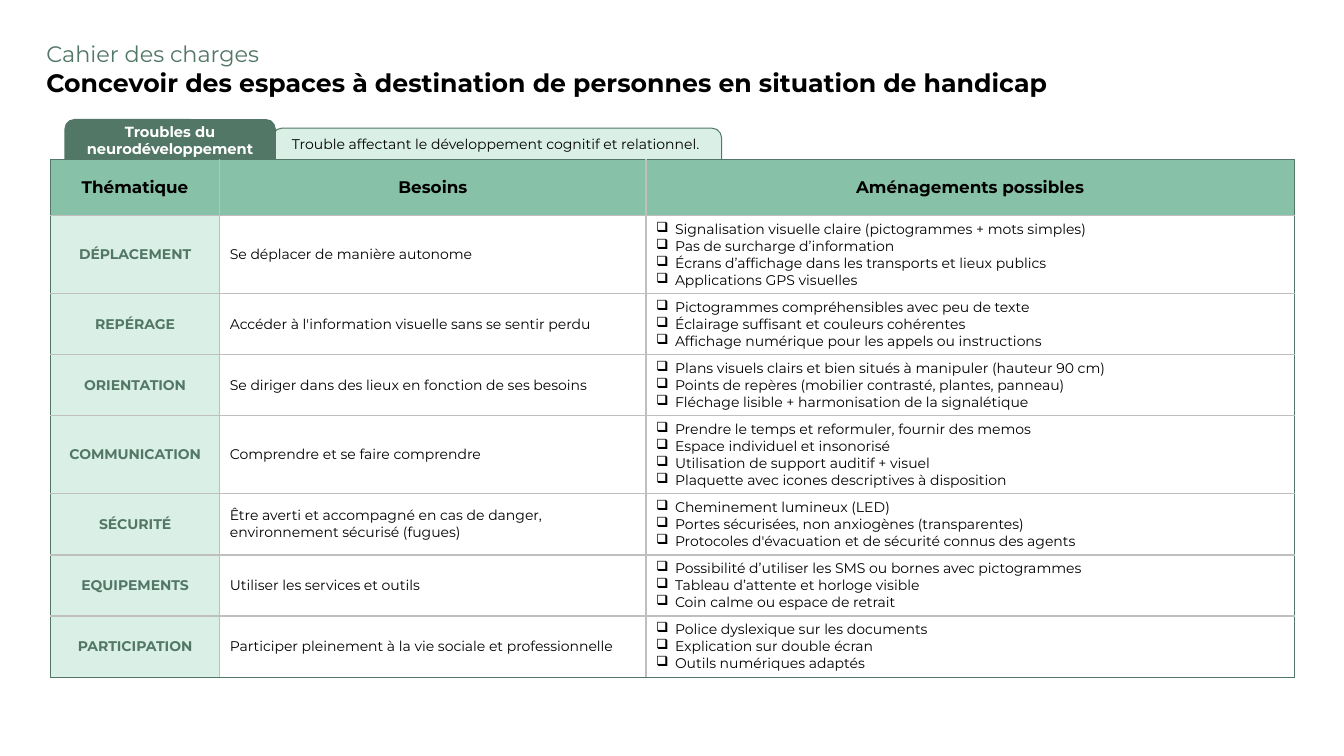
from dataclasses import dataclass

from lxml.etree import SubElement
from pptx import Presentation
from pptx.dml.color import RGBColor
from pptx.enum.shapes import MSO_SHAPE
from pptx.enum.text import MSO_ANCHOR, PP_ALIGN
from pptx.oxml.ns import qn
from pptx.util import Pt


@dataclass(frozen=True)
class Theme:
    font: str = "Montserrat"
    dark: str = "527767"
    medium: str = "86C1A8"
    light: str = "DAF0E7"
    grid: str = "BFBFBF"
    black: str = "000000"
    white: str = "FFFFFF"
    title: float = 18
    subtitle: float = 16
    header: float = 12
    tab: float = 10.5
    body: float = 10


HEADERS = ["Thématique", "Besoins", "Aménagements possibles"]
COLUMN_WIDTHS = [121, 304.5, 463]
HEADER_HEIGHT = 40
LINE_HEIGHT = 12
ROW_PADDING = 7.5
BULLET_INDENT = 13.5

REQUIREMENTS = [
    ("DÉPLACEMENT", "Se déplacer de manière autonome", [
        "Signalisation visuelle claire (pictogrammes + mots simples)",
        "Pas de surcharge d’information",
        "Écrans d’affichage dans les transports et lieux publics",
        "Applications GPS visuelles",
    ]),
    ("REPÉRAGE", "Accéder à l'information visuelle sans se sentir perdu", [
        "Pictogrammes compréhensibles avec peu de texte",
        "Éclairage suffisant et couleurs cohérentes",
        "Affichage numérique pour les appels ou instructions",
    ]),
    ("ORIENTATION", "Se diriger dans des lieux en fonction de ses besoins", [
        "Plans visuels clairs et bien situés à manipuler (hauteur 90 cm)",
        "Points de repères (mobilier contrasté, plantes, panneau)",
        "Fléchage lisible + harmonisation de la signalétique",
    ]),
    ("COMMUNICATION", "Comprendre et se faire comprendre", [
        "Prendre le temps et reformuler, fournir des memos",
        "Espace individuel et insonorisé",
        "Utilisation de support auditif + visuel",
        "Plaquette avec icones descriptives à disposition",
    ]),
    ("SÉCURITÉ", "Être averti et accompagné en cas de danger, environnement sécurisé (fugues)", [
        "Cheminement lumineux (LED)",
        "Portes sécurisées, non anxiogènes (transparentes)",
        "Protocoles d'évacuation et de sécurité connus des agents",
    ]),
    ("EQUIPEMENTS", "Utiliser les services et outils", [
        "Possibilité d’utiliser les SMS ou bornes avec pictogrammes",
        "Tableau d’attente et horloge visible",
        "Coin calme ou espace de retrait",
    ]),
    ("PARTICIPATION", "Participer pleinement à la vie sociale et professionnelle", [
        "Police dyslexique sur les documents",
        "Explication sur double écran",
        "Outils numériques adaptés",
    ]),
]


def apply_format(target, values):
    for name, value in values.items():
        setattr(target, name, value)


class SlideBuilder:
    def __init__(self, slide, theme):
        self.slide = slide
        self.theme = theme

    def add_text(self, frame, text, size, color, bold=False, align=PP_ALIGN.LEFT, first=True):
        paragraph = frame.paragraphs[0] if first else frame.add_paragraph()
        paragraph.alignment = align
        run = paragraph.add_run()
        run.text = text
        apply_format(run.font, {"name": self.theme.font, "size": Pt(size), "bold": bold})
        run.font.color.rgb = RGBColor.from_string(color)
        return paragraph

    def add_title(self, left, top, width, height, subtitle, title):
        frame = self.slide.shapes.add_textbox(Pt(left), Pt(top), Pt(width), Pt(height)).text_frame
        frame.word_wrap = False
        self.add_text(frame, subtitle, self.theme.subtitle, self.theme.dark)
        self.add_text(frame, title, self.theme.title, self.theme.black, bold=True, first=False)

    def add_tab(self, left, top, width, height, fill, line, margins, text, **style):
        shape = self.slide.shapes.add_shape(
            MSO_SHAPE.ROUNDED_RECTANGLE, Pt(left), Pt(top), Pt(width), Pt(height))
        shape.shadow.inherit = False
        shape.fill.solid()
        shape.fill.fore_color.rgb = RGBColor.from_string(fill)
        if line:
            shape.line.color.rgb = RGBColor.from_string(line)
            shape.line.width = Pt(0.75)
        else:
            shape.line.fill.background()
        frame = shape.text_frame
        margin_left, margin_top = margins
        apply_format(frame, {
            "word_wrap": True,
            "vertical_anchor": MSO_ANCHOR.TOP,
            "margin_left": Pt(margin_left),
            "margin_top": Pt(margin_top),
        })
        self.add_text(frame, text, **style)

    def add_bullet(self, paragraph):
        properties = paragraph._p.get_or_add_pPr()
        properties.set("marL", str(Pt(BULLET_INDENT)))
        properties.set("indent", str(-Pt(BULLET_INDENT)))
        SubElement(properties, qn("a:buChar")).set("char", "❑")

    def set_cell(self, cell, fill, edges):
        cell.vertical_anchor = MSO_ANCHOR.MIDDLE
        properties = cell._tc.get_or_add_tcPr()
        for side, outer in edges.items():
            line = SubElement(properties, qn(f"a:ln{side}"), w=str(Pt(1)))
            solid = SubElement(line, qn("a:solidFill"))
            color = self.theme.dark if outer else self.theme.grid
            SubElement(solid, qn("a:srgbClr")).set("val", color)
        cell.fill.solid()
        cell.fill.fore_color.rgb = RGBColor.from_string(fill)

    def add_table(self, left, top, headers, requirements):
        theme = self.theme
        heights = [HEADER_HEIGHT]
        heights += [LINE_HEIGHT * len(items) + ROW_PADDING for _, _, items in requirements]
        table = self.slide.shapes.add_table(
            len(heights), len(headers), Pt(left), Pt(top),
            Pt(sum(COLUMN_WIDTHS)), Pt(sum(heights))).table
        apply_format(table, {"first_row": False, "horz_banding": False})
        for column, width in zip(table.columns, COLUMN_WIDTHS):
            column.width = Pt(width)
        for row, height in zip(table.rows, heights):
            row.height = Pt(height)
        last_row, last_column = len(heights) - 1, len(headers) - 1
        for i in range(len(heights)):
            for j in range(len(headers)):
                fill = theme.medium if i == 0 else theme.light if j == 0 else theme.white
                edges = {"L": j == 0, "R": j == last_column, "T": i == 0, "B": i == last_row}
                self.set_cell(table.cell(i, j), fill, edges)
        for j, header in enumerate(headers):
            self.add_text(table.cell(0, j).text_frame, header, theme.header, theme.black,
                          bold=True, align=PP_ALIGN.CENTER)
        for i, (topic, need, items) in enumerate(requirements, 1):
            topic_frame, need_frame, items_frame = [cell.text_frame for cell in table.rows[i].cells]
            self.add_text(topic_frame, topic, theme.body, theme.dark, bold=True, align=PP_ALIGN.CENTER)
            self.add_text(need_frame, need, theme.body, theme.black)
            for k, item in enumerate(items):
                self.add_bullet(self.add_text(items_frame, item, theme.body, theme.black, first=k == 0))


def main():
    presentation = Presentation()
    apply_format(presentation, {"slide_width": Pt(960), "slide_height": Pt(540)})
    theme = Theme()
    builder = SlideBuilder(presentation.slides.add_slide(presentation.slide_layouts[6]), theme)
    builder.add_tab(194.5, 91.5, 321, 42.5, theme.light, theme.dark, (12, 3.6),
                    "Trouble affectant le développement cognitif et relationnel.",
                    size=theme.body, color=theme.black)
    builder.add_tab(46, 85, 151, 42.5, theme.dark, None, (7.2, 0.5),
                    "Troubles du neurodéveloppement",
                    size=theme.tab, color=theme.white, bold=True, align=PP_ALIGN.CENTER)
    builder.add_table(36, 114, HEADERS, REQUIREMENTS)
    builder.add_title(26, 25, 736.5, 48, "Cahier des charges",
                      "Concevoir des espaces à destination de personnes en situation de handicap")
    presentation.save("out.pptx")


if __name__ == "__main__":
    main()
